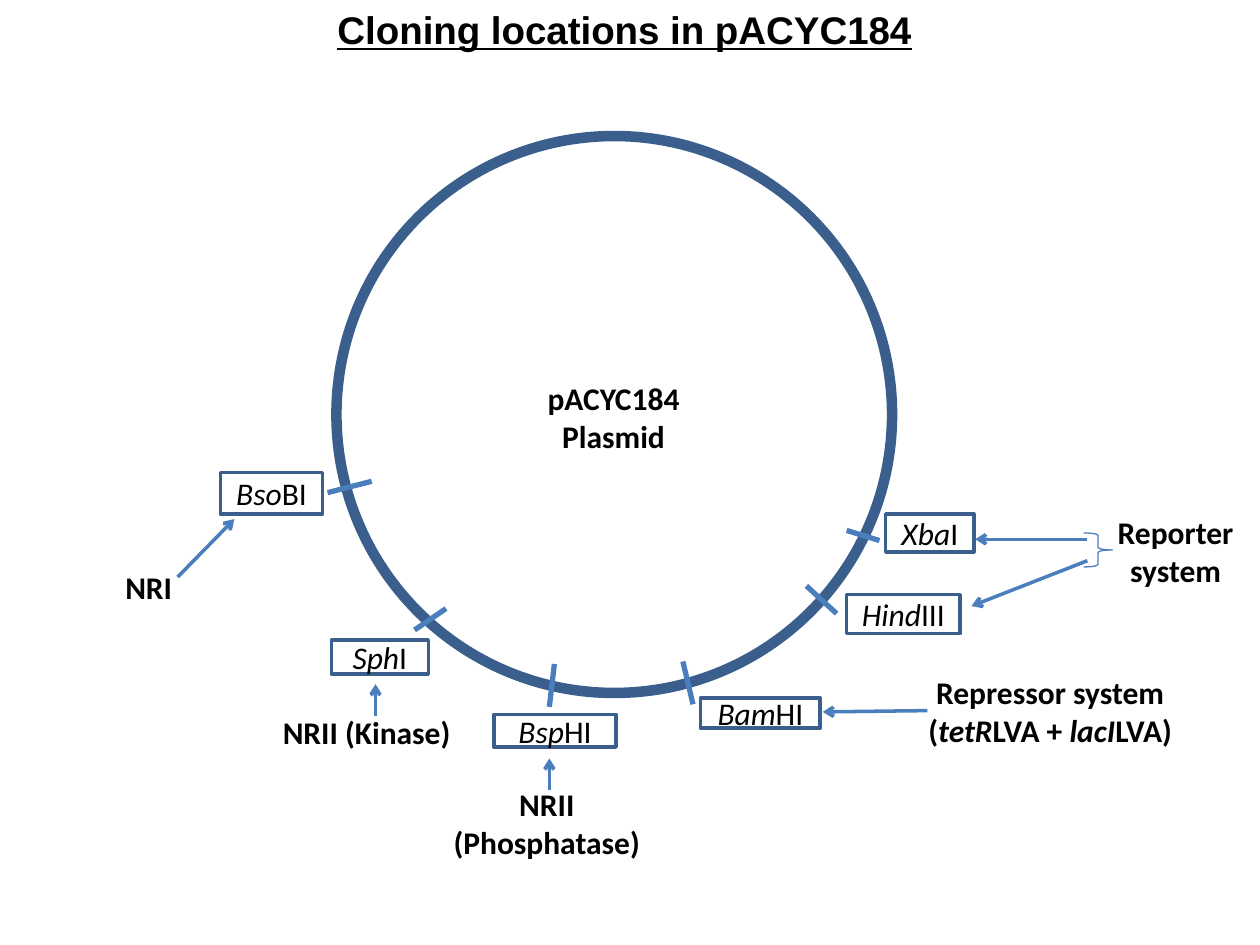
from dataclasses import dataclass

from lxml.etree import SubElement
from pptx import Presentation
from pptx.dml.color import RGBColor
from pptx.enum.shapes import MSO_CONNECTOR as Connector, MSO_SHAPE as Preset
from pptx.enum.text import MSO_ANCHOR as Anchor, MSO_AUTO_SIZE as AutoSize, PP_ALIGN as Align
from pptx.oxml.ns import qn
from pptx.util import Inches, Pt

DARK_BLUE = "3A5F8C"
MID_BLUE = "4B7EBC"
BLACK = "000000"
BODY = {"name": "Calibri", "size": Pt(18)}
BOLD = {**BODY, "bold": True}
HEADING = {"name": "Arial", "size": Pt(22), "bold": True, "underline": True}


@dataclass(frozen=True)
class Area:
    left: float
    top: float
    width: float
    height: float

    def lengths(self) -> tuple:
        return tuple(Inches(n) for n in (self.left, self.top, self.width, self.height))


@dataclass(frozen=True)
class Site:
    enzyme: str
    area: Area
    tick: tuple


@dataclass(frozen=True)
class Label:
    lines: tuple
    area: Area


SITES = (
    Site("*Bso*BI", Area(1.75, 3.75, 0.81, 0.33), (2.6, 3.91, 2.95, 3.82)),
    Site("*Sph*I", Area(2.63, 5.08, 0.77, 0.27), (3.54, 4.83, 3.29, 5)),
    Site("*Bsp*HI", Area(3.92, 5.67, 0.97, 0.26), (4.4, 5.27, 4.36, 5.61)),
    Site("*Bam*HI", Area(5.56, 5.54, 0.95, 0.24), (5.42, 5.25, 5.5, 5.59)),
    Site("*Hind*III", Area(6.72, 4.72, 0.9, 0.31), (6.4, 4.65, 6.64, 4.87)),
    Site("*Xba*I", Area(7.03, 4.08, 0.7, 0.3), (6.72, 4.21, 6.98, 4.29)),
)
LABELS = (
    Label(("Reporter system",), Area(8.74, 4.02, 1.18, 0.71)),
    Label(("Repressor system (*tetR*LVA + *lacI*LVA)",), Area(7.25, 5.29, 2.17, 0.71)),
    Label(("NRII", "(Phosphatase)"), Area(3.5, 6.18, 1.68, 0.71)),
    Label(("NRII (Kinase)",), Area(2, 5.61, 1.82, 0.25)),
    Label(("NRI",), Area(0.32, 4.46, 1.72, 0.4)),
    Label(("pACYC184", "Plasmid"), Area(4.24, 2.96, 1.26, 0.71)),
)
ARROWS = (
    (8.63, 4.28, 7.74, 4.28),
    (8.63, 4.45, 7.71, 4.81),
    (7.36, 5.64, 6.53, 5.65),
    (4.36, 6.27, 4.36, 6.02),
    (2.98, 5.68, 2.98, 5.43),
    (1.41, 4.58, 1.86, 4.12),
)


def colour(value: str) -> RGBColor:
    return RGBColor.from_string(value)


def write(frame, lines: tuple, style: dict, align=Align.CENTER) -> None:
    for index, line in enumerate(lines):
        para = frame.paragraphs[0] if index == 0 else frame.add_paragraph()
        para.alignment = align
        for part, words in enumerate(line.split("*")):
            if words:
                span = para.add_run()
                span.text = words
                for key, value in style.items():
                    setattr(span.font, key, value)
                span.font.italic = part % 2 == 1
                span.font.color.rgb = colour(BLACK)


def add_outline(page, preset, area: Area, line: str, weight: float):
    shape = page.shapes.add_shape(preset, *area.lengths())
    shape.shadow.inherit = False
    shape.fill.background()
    shape.line.color.rgb = colour(line)
    shape.line.width = Pt(weight)
    return shape


def add_text(page, label: Label, style: dict, wrap: bool = True, align=Align.CENTER) -> None:
    box = page.shapes.add_textbox(*label.area.lengths())
    box.text_frame.word_wrap = wrap
    box.text_frame.auto_size = AutoSize.SHAPE_TO_FIT_TEXT
    write(box.text_frame, label.lines, style, align)


def add_line(page, ends: tuple, weight: float, arrow: bool = False) -> None:
    line = page.shapes.add_connector(Connector.STRAIGHT, *map(Inches, ends))
    line.line.color.rgb = colour(MID_BLUE)
    line.line.width = Pt(weight)
    if arrow:
        SubElement(line.line._get_or_add_ln(), qn("a:tailEnd"), type="arrow")
    SubElement(line._element.spPr, qn("a:effectLst"))


def add_site(page, site: Site) -> None:
    box = add_outline(page, Preset.RECTANGLE, site.area, DARK_BLUE, 2)
    box.text_frame.word_wrap = True
    box.text_frame.vertical_anchor = Anchor.MIDDLE
    write(box.text_frame, (site.enzyme,), BODY)
    add_line(page, site.tick, 3)


def main() -> None:
    """Draw the plasmid map with its cloning sites and inserted systems."""
    deck = Presentation()
    deck.slide_width, deck.slide_height = Inches(10), Inches(7.5)
    page = deck.slides.add_slide(deck.slide_layouts[6])
    add_outline(page, Preset.OVAL, Area(2.67, 1.08, 4.41, 4.42), DARK_BLUE, 6)
    for site in SITES:
        add_site(page, site)
    for ends in ARROWS:
        add_line(page, ends, 2, arrow=True)
    add_outline(page, Preset.RIGHT_BRACE, Area(8.6, 4.23, 0.23, 0.27), MID_BLUE, 0.75)
    for label in LABELS:
        add_text(page, label, BOLD)
    title = Label(("Cloning locations in pACYC184",), Area(2.58, 0, 4.82, 0.47))
    add_text(page, title, HEADING, wrap=False, align=Align.LEFT)
    deck.save("out.pptx")


if __name__ == "__main__":
    main()
